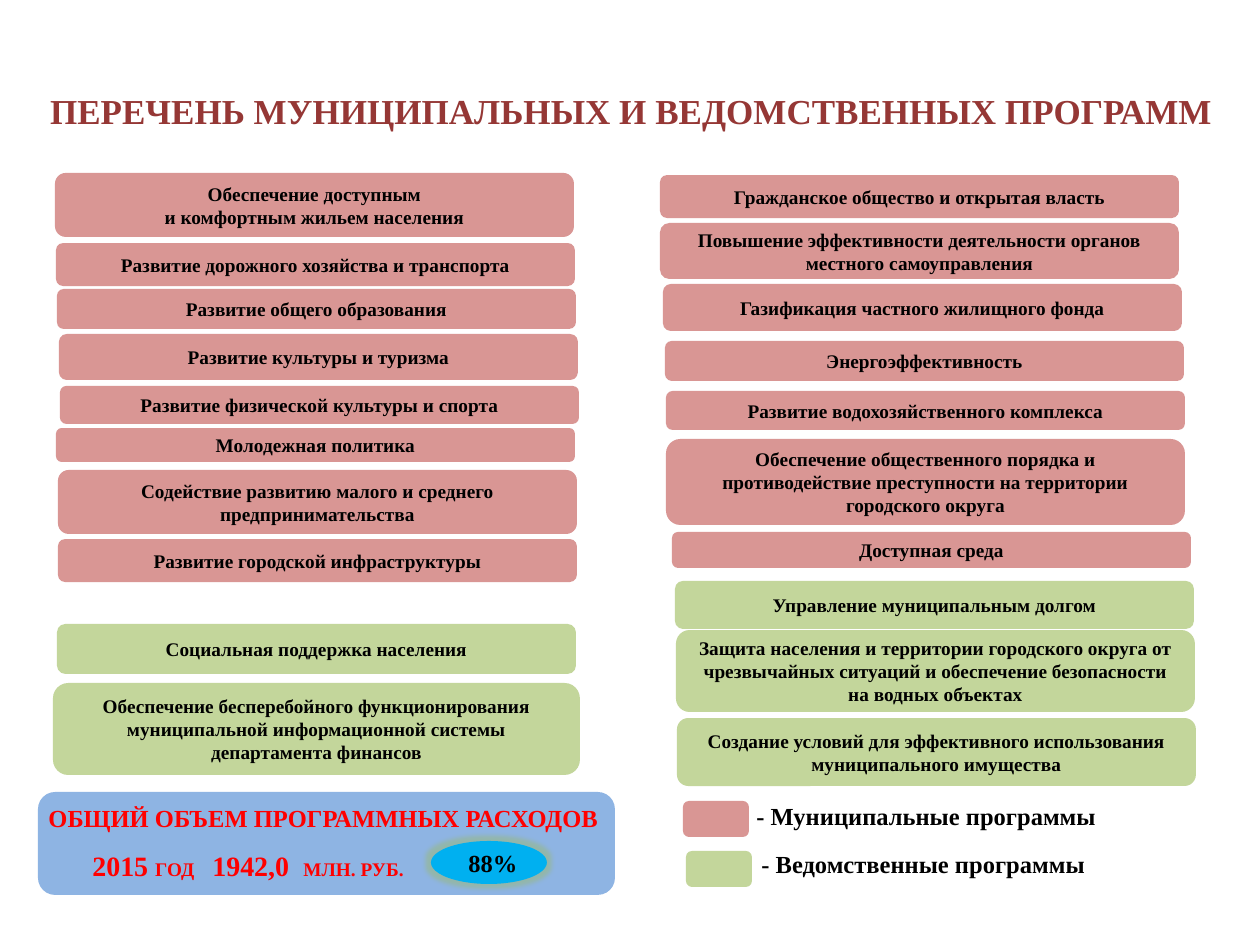
from dataclasses import dataclass

from lxml.etree import SubElement
from pptx import Presentation
from pptx.dml.color import RGBColor
from pptx.enum.shapes import MSO_SHAPE
from pptx.enum.text import MSO_ANCHOR, PP_ALIGN
from pptx.oxml.ns import qn
from pptx.util import Emu, Pt

PX = 914400 / 126


@dataclass(frozen=True)
class Theme:
    """Colours, font and type sizes of the slide."""

    font: str = "Times New Roman"
    municipal: str = "D99694"
    departmental: str = "C3D69B"
    total: str = "8EB4E3"
    share: str = "00B0F0"
    glow: str = "9BBB59"
    heading: str = "953735"
    accent: str = "FF0000"
    ink: str = "000000"
    title_size: int = 20
    figure_size: int = 16
    label_size: int = 14
    body_size: int = 11


THEME = Theme()
CARD_WIDTH = 519

# left, top, height, text
MUNICIPAL_PROGRAMS = [
    (55, 173, 64, "Обеспечение доступным\nи комфортным жильем населения"),
    (56, 243, 43, "Развитие дорожного хозяйства и транспорта"),
    (57, 289, 40, "Развитие общего образования"),
    (59, 334, 46, "Развитие культуры и туризма"),
    (60, 386, 38, "Развитие физической культуры и спорта"),
    (56, 428, 34, "Молодежная политика"),
    (58, 470, 64, "Содействие развитию малого и среднего предпринимательства"),
    (58, 539, 43, "Развитие городской инфраструктуры"),
    (660, 175, 43, "Гражданское общество и открытая власть"),
    (660, 223, 56, "Повышение эффективности деятельности органов местного самоуправления"),
    (663, 284, 47, "Газификация частного жилищного фонда"),
    (665, 341, 40, "Энергоэффективность"),
    (666, 391, 39, "Развитие водохозяйственного комплекса"),
    (666, 439, 86, "Обеспечение общественного порядка и противодействие "
                   "преступности на территории городского округа"),
    (672, 532, 36, "Доступная среда"),
]
DEPARTMENTAL_PROGRAMS = [
    (57, 624, 50, "Социальная поддержка населения"),
    (675, 581, 48, "Управление муниципальным долгом"),
    (676, 630, 82, "Защита населения и территории городского округа от чрезвычайных "
                   "ситуаций и обеспечение безопасности на водных объектах"),
    (677, 718, 68, "Создание условий для эффективного использования "
                   "муниципального имущества"),
]
INFORMATION_SYSTEM = ("Обеспечение бесперебойного функционирования муниципальной "
                      "информационной системы департамента финансов")


def px(length):
    """Turn px into EMU."""
    return Emu(round(length * PX))


def style(font, size, color):
    """Apply the bold theme font with a size and a colour."""
    font.name = THEME.font
    font.size = Pt(size)
    font.bold = True
    font.color.rgb = RGBColor.from_string(color)


def write(shape, text, size, color, align):
    """Write one paragraph for each line of text."""
    frame = shape.text_frame
    frame.text = text
    frame.word_wrap = True
    for para in frame.paragraphs:
        para.alignment = align
        style(para.font, size, color)


def add_block(page, kind, area, fill):
    """Add a flat preset shape without a line or a shadow."""
    block = page.shapes.add_shape(kind, *map(px, area))
    block.shadow.inherit = False
    block.fill.solid()
    block.fill.fore_color.rgb = RGBColor.from_string(fill)
    block.line.fill.background()
    return block


def add_card(page, area, fill, text=""):
    """Add a rounded program card with centred text."""
    card = add_block(page, MSO_SHAPE.FLOWCHART_ALTERNATE_PROCESS, area, fill)
    if text:
        card.text_frame.vertical_anchor = MSO_ANCHOR.MIDDLE
        write(card, text, THEME.body_size, THEME.ink, PP_ALIGN.CENTER)


def add_label(page, area, text, size, color, align=PP_ALIGN.LEFT):
    """Add a text box with a single line."""
    box = page.shapes.add_textbox(*map(px, area))
    write(box, text, size, color, align)
    return box


def add_title(page):
    """Add the slide heading."""
    box = add_label(page, (36, 76, 1190, 69),
                    "ПЕРЕЧЕНЬ МУНИЦИПАЛЬНЫХ И ВЕДОМСТВЕННЫХ ПРОГРАММ",
                    THEME.title_size, THEME.heading, PP_ALIGN.CENTER)
    box.text_frame.word_wrap = False
    box.text_frame.vertical_anchor = MSO_ANCHOR.MIDDLE


def add_tab_stops(para, positions):
    """Set left tab stops on a paragraph."""
    stops = SubElement(para._p.get_or_add_pPr(), qn("a:tabLst"))
    for position in positions:
        SubElement(stops, qn("a:tab"), pos=str(px(position)), algn="l")


def add_glow(shape, color, radius):
    """Put a translucent glow around a shape."""
    effects = shape._element.spPr.find(qn("a:effectLst"))
    glow = SubElement(effects, qn("a:glow"), rad=str(px(radius)))
    tint = SubElement(glow, qn("a:srgbClr"), val=color)
    SubElement(tint, qn("a:alpha"), val="40000")


def add_total(page):
    """Add the panel with the total spending and its share."""
    add_block(page, MSO_SHAPE.ROUNDED_RECTANGLE, (38, 792, 577, 103), THEME.total)
    add_label(page, (36, 797, 589, 43), "ОБЩИЙ ОБЪЕМ ПРОГРАММНЫХ РАСХОДОВ",
              THEME.label_size, THEME.accent)
    box = page.shapes.add_textbox(*map(px, (45, 842, 406, 47)))
    box.text_frame.word_wrap = True
    para = box.text_frame.paragraphs[0]
    add_tab_stops(para, (35, 155, 246))
    for text, size in (("\t2015 ", THEME.figure_size), ("ГОД", THEME.body_size),
                       ("\t1942,0", THEME.figure_size), ("\tМЛН. РУБ.", THEME.body_size)):
        span = para.add_run()
        span.text = text
        style(span.font, size, THEME.accent)
    share = add_block(page, MSO_SHAPE.OVAL, (431, 841, 116, 43), THEME.share)
    add_glow(share, THEME.glow, 9)
    share.text_frame.vertical_anchor = MSO_ANCHOR.MIDDLE
    write(share, "88%", THEME.label_size, THEME.ink, PP_ALIGN.RIGHT)


def add_legend(page):
    """Add the key to the two card colours."""
    for left, top, label_left, label_top, fill, text in (
        (683, 801, 744, 795, THEME.municipal, "- Муниципальные программы"),
        (686, 851, 749, 843, THEME.departmental, "- Ведомственные программы"),
    ):
        add_card(page, (left, top, 66, 36), fill)
        add_label(page, (label_left, label_top, 393, 43), text,
                  THEME.label_size, THEME.ink)


def main():
    """Build and save the slide."""
    deck = Presentation()
    deck.slide_width, deck.slide_height = px(1260), px(945)
    page = deck.slides.add_slide(deck.slide_layouts[6])
    add_title(page)
    for programs, fill in ((MUNICIPAL_PROGRAMS, THEME.municipal),
                           (DEPARTMENTAL_PROGRAMS, THEME.departmental)):
        for left, top, height, text in programs:
            add_card(page, (left, top, CARD_WIDTH, height), fill, text)
    add_card(page, (53, 683, 527, 92), THEME.departmental, INFORMATION_SYSTEM)
    add_total(page)
    add_legend(page)
    deck.save("out.pptx")


if __name__ == "__main__":
    main()
